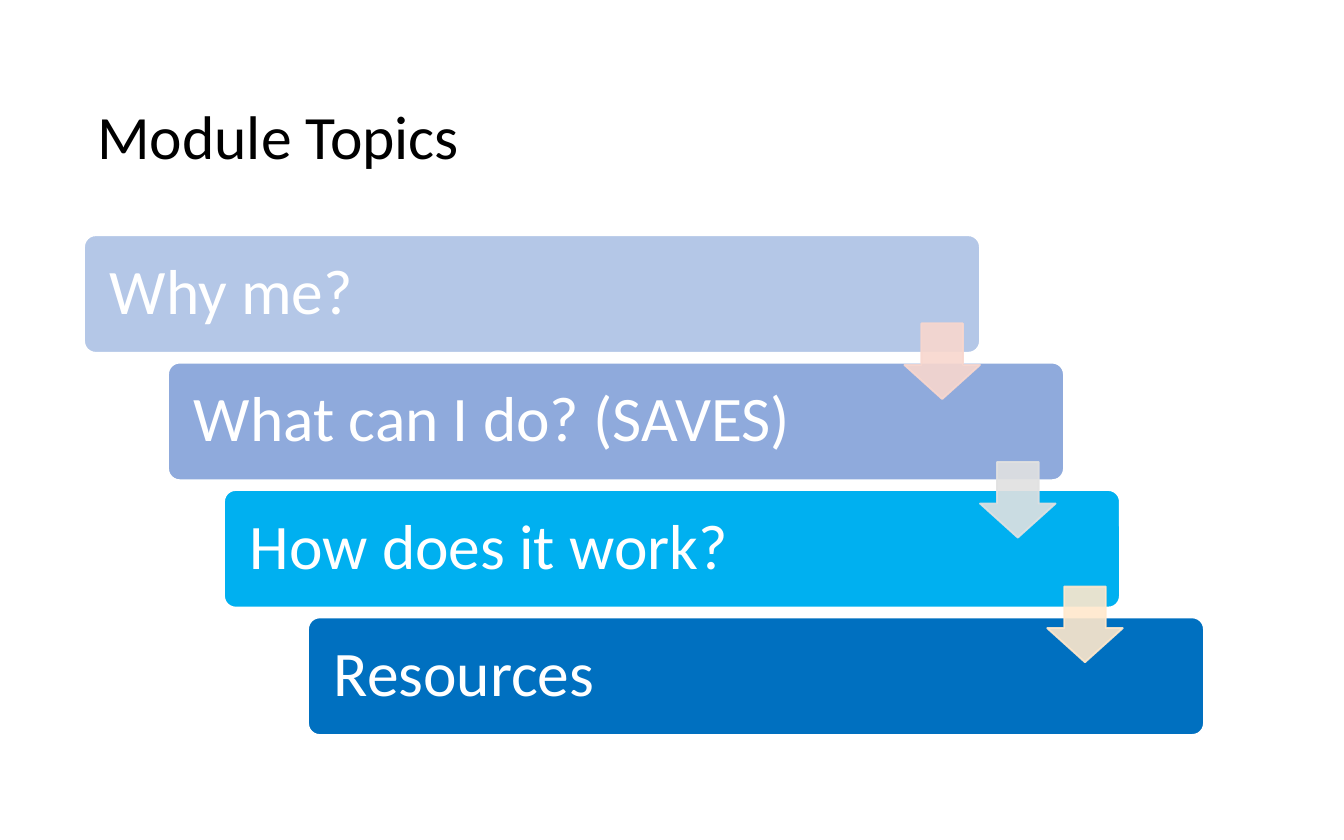
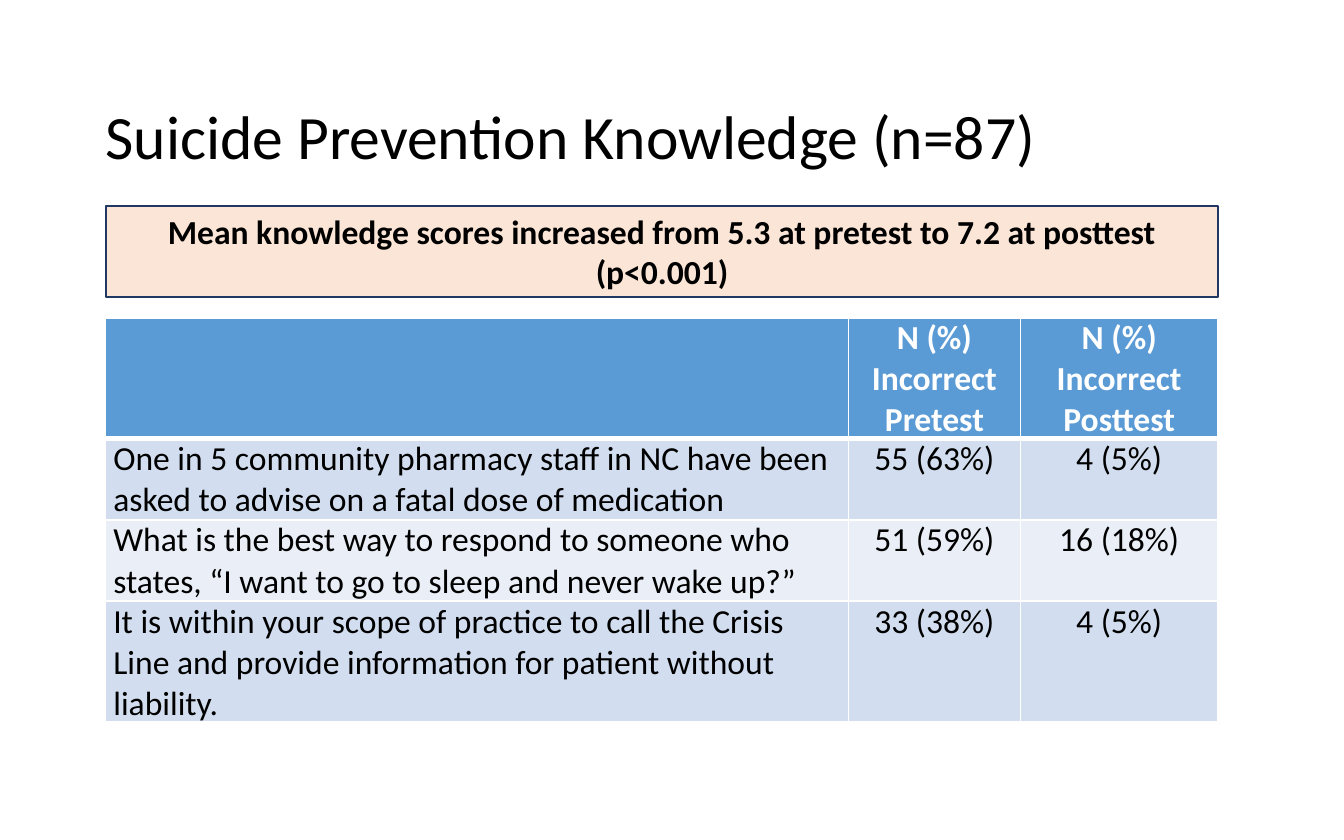
"""Build two slides: the module topics cascade and the knowledge score table."""
from lxml import etree
from pptx import Presentation
from pptx.dml.color import RGBColor
from pptx.enum.shapes import MSO_SHAPE
from pptx.enum.text import MSO_ANCHOR, PP_ALIGN
from pptx.oxml.ns import qn
from pptx.util import Pt

PX = 9525
FONT = "Calibri"
LEFT, CENTER = PP_ALIGN.LEFT, PP_ALIGN.CENTER
MIDDLE = MSO_ANCHOR.MIDDLE
BAR, ARROW, RECTANGLE = MSO_SHAPE.ROUNDED_RECTANGLE, MSO_SHAPE.DOWN_ARROW, MSO_SHAPE.RECTANGLE

BLACK = RGBColor(0x00, 0x00, 0x00)
WHITE = RGBColor(0xFF, 0xFF, 0xFF)
PALE_BLUE = RGBColor(0xB4, 0xC7, 0xE7)
SOFT_BLUE = RGBColor(0x8F, 0xAA, 0xDC)
SKY_BLUE = RGBColor(0x00, 0xB0, 0xF0)
DEEP_BLUE = RGBColor(0x00, 0x70, 0xC0)
ROSE = RGBColor(0xF8, 0xD7, 0xCE)
SILVER = RGBColor(0xE1, 0xE1, 0xE1)
CREAM = RGBColor(0xFF, 0xE8, 0xCC)
PEACH = RGBColor(0xFB, 0xE5, 0xD6)
NAVY = RGBColor(0x20, 0x38, 0x64)
HEADER_BLUE = RGBColor(0x5B, 0x9B, 0xD5)
BAND_DARK = RGBColor(0xD2, 0xDE, 0xEF)
BAND_LIGHT = RGBColor(0xEA, 0xEF, 0xF7)


def write(frame, text, size=18, color=BLACK, bold=False, align=LEFT, spacing=1.0):
    frame.word_wrap = True
    for index, line in enumerate(text.split("\n")):
        paragraph = frame.add_paragraph() if index else frame.paragraphs[0]
        paragraph.alignment = align
        paragraph.line_spacing = spacing
        run = paragraph.add_run()
        run.text = line
        run.font.name = FONT
        run.font.size = Pt(size)
        run.font.bold = bold
        run.font.color.rgb = color


def draw(slide, preset, box, fill, line):
    shape = slide.shapes.add_shape(preset, *[value * PX for value in box])
    shape.shadow.inherit = False
    shape.fill.solid()
    shape.fill.fore_color.rgb = fill
    shape.line.color.rgb = line
    shape.line.width = Pt(1)
    shape.text_frame.vertical_anchor = MIDDLE
    return shape


prs = Presentation()
prs.slide_width, prs.slide_height = 960 * PX, 600 * PX

titles = [
    ("Module Topics", (60, 54, 780, 91)),
    ("Suicide Prevention Knowledge (n=87)", (66, 59, 828, 82)),
]
slides = []
for heading, box in titles:
    slide = prs.slides.add_slide(prs.slide_layouts[6])
    title = slide.shapes.add_textbox(*[value * PX for value in box])
    title.text_frame.vertical_anchor = MIDDLE
    write(title.text_frame, heading, size=33, spacing=0.9)
    slides.append(slide)
topics_slide, knowledge_slide = slides

topics = [
    ("Why me?", 60, PALE_BLUE),
    ("What can I do? (SAVES)", 120, SOFT_BLUE),
    ("How does it work?", 160, SKY_BLUE),
    ("Resources", 220, DEEP_BLUE),
]
for step, (topic, left, color) in enumerate(topics):
    bar = draw(topics_slide, BAR, (left, 168 + 91 * step, 640, 84), color, WHITE)
    bar.adjustments[0] = 0.1
    bar.text_frame.margin_left = bar.text_frame.margin_right = 16 * PX
    write(bar.text_frame, topic, size=34, color=WHITE, spacing=0.9)

for left, top, color in [(646, 231, ROSE), (700, 330, SILVER), (748, 419, CREAM)]:
    arrow = draw(topics_slide, ARROW, (left, top, 54, 54), color, color)
    arrow.adjustments[0], arrow.adjustments[1] = 0.55, 0.45
    for tint in list(arrow._element.spPr.iter(qn("a:srgbClr"))):
        etree.SubElement(tint, qn("a:alpha"), val="90000")

rows = [
    ("", "N (%)\nIncorrect\nPretest", "N (%)\nIncorrect\nPosttest"),
    ("One in 5 community pharmacy staff in NC have been asked to advise on a fatal dose of medication",
     "55 (63%)", "4 (5%)"),
    ("What is the best way to respond to someone who states, “I want to go to sleep and never wake up?”",
     "51 (59%)", "16 (18%)"),
    ("It is within your scope of practice to call the Crisis Line and provide information for patient "
     "without liability.", "33 (38%)", "4 (5%)"),
]
column_widths = [531, 123, 141]
row_heights = [86, 58, 58, 86]
row_fills = [HEADER_BLUE, BAND_DARK, BAND_LIGHT, BAND_DARK]
scores = knowledge_slide.shapes.add_table(
    len(rows), len(column_widths), 75 * PX, 227 * PX, sum(column_widths) * PX, sum(row_heights) * PX).table
for column, width in zip(scores.columns, column_widths):
    column.width = width * PX
for r, values in enumerate(rows):
    scores.rows[r].height = row_heights[r] * PX
    is_header = r == 0
    for c, value in enumerate(values):
        cell = scores.cell(r, c)
        cell.margin_left = cell.margin_right = 6 * PX
        cell.margin_top = cell.margin_bottom = 0
        if value:
            write(cell.text_frame, value, color=WHITE if is_header else BLACK,
                  bold=is_header, align=CENTER if c else LEFT)
        properties = cell._tc.get_or_add_tcPr()
        for side in ("L", "R", "T", "B"):
            weight = Pt(3) if is_header and side == "B" else Pt(1)
            border = etree.SubElement(properties, qn(f"a:ln{side}"), w=str(weight))
            solid = etree.SubElement(border, qn("a:solidFill"))
            etree.SubElement(solid, qn("a:srgbClr"), val=str(WHITE))
        cell.fill.solid()
        cell.fill.fore_color.rgb = row_fills[r]

finding = draw(knowledge_slide, RECTANGLE, (76, 147, 794, 65), PEACH, NAVY)
write(finding.text_frame, "Mean knowledge scores increased from 5.3 at pretest to 7.2 at posttest\n(p<0.001)",
      bold=True, align=CENTER)

prs.save("out.pptx")
